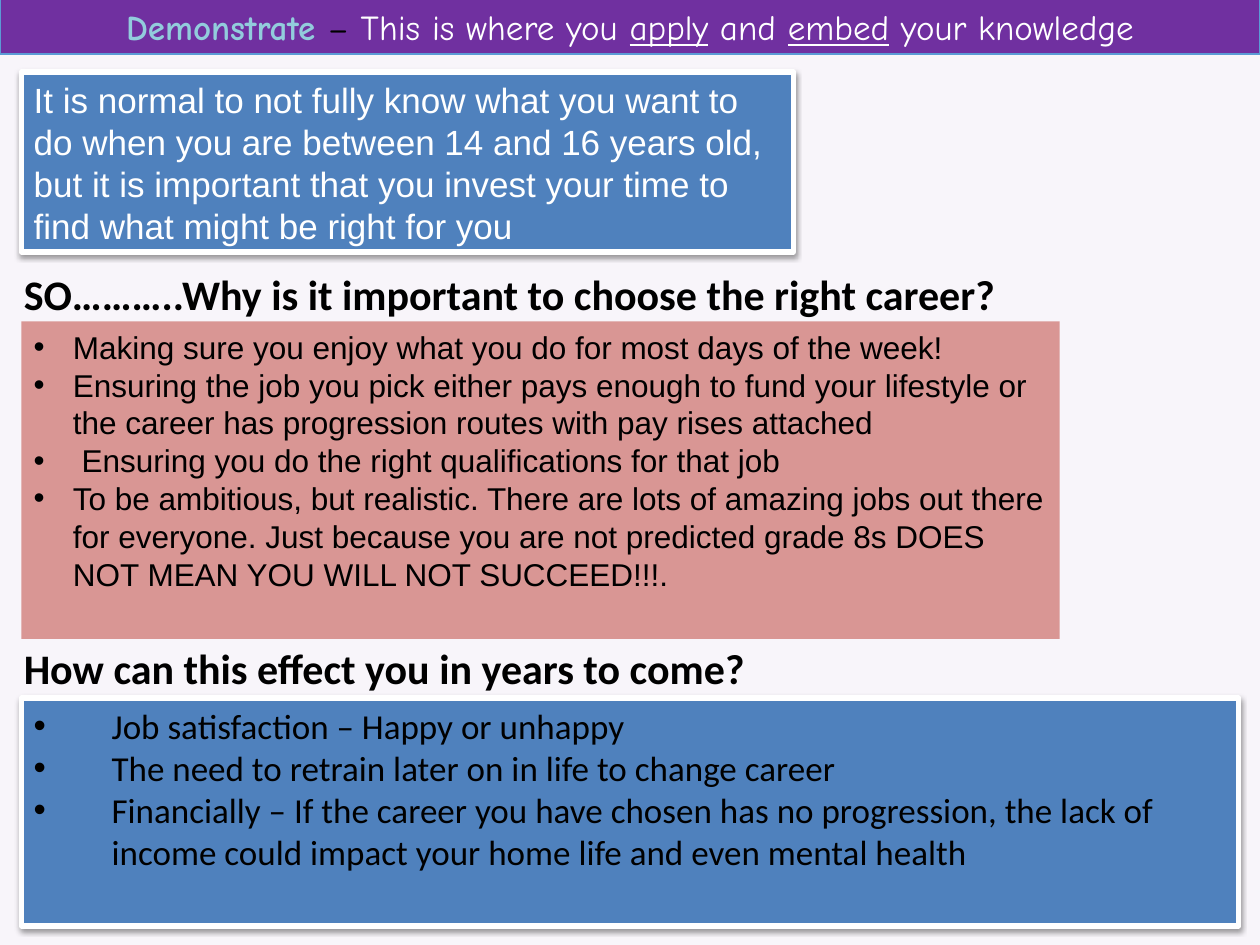
"""Build the careers lesson slide about choosing the right career."""
from dataclasses import dataclass
from typing import Optional

from lxml import etree
from pptx import Presentation
from pptx import util as u
from pptx.dml.color import RGBColor
from pptx.enum import shapes, text
from pptx.oxml import parse_xml
from pptx.oxml.ns import nsdecls, qn

COLOURS = {
    "page": "F8F5FA", "purple": "7030A0", "edge": "5B9BD5", "aqua": "92CCDC",
    "blue": "4F81BD", "pink": "D99694", "white": "FFFFFF", "black": "000000",
}


@dataclass
class Block:
    """A text area with its position in centimetres and its formatting."""
    left: float
    top: float
    width: float
    height: float
    lines: list[str]
    font: str
    size: int
    colour: str = "black"
    fill: Optional[str] = None
    edge: Optional[str] = None
    edge_width: float = 3
    indent: float = 0
    bold: bool = False
    shadow: bool = False
    centred: bool = False


BANNER = Block(0, -0.03, 25.4, 1.12, [], "Comic Neue", 20, fill="purple",
               edge="edge", edge_width=1, centred=True)
BANNER_RUNS = [
    ("Demonstrate ", "aqua", True, False), ("– ", "black", False, False),
    ("This is where you ", "white", False, False), ("apply", "white", False, True),
    (" and ", "white", False, False), ("embed", "white", False, True),
    (" your knowledge", "white", False, False),
]
INTRO = Block(0.43, 1.45, 15.57, 3.63, [
    "It is normal to not fully know what you want to do when you are between 14 and 16 years old, "
    "but it is important that you invest your time to find what might be right for you",
], "Arial", 20, "white", "blue", "white", shadow=True)
HEADINGS = [
    Block(0.23, 5.28, 24.97, 2.39, ["SO………..Why is it important to choose the right career?"],
          "Calibri", 24, bold=True),
    Block(0.23, 12.83, 24.97, 1.57, ["How can this effect you in years to come?"],
          "Calibri", 24, bold=True),
]
LISTS = [
    Block(0.43, 6.48, 20.93, 6.4, [
        "Making sure you enjoy what you do for most days of the week!",
        "Ensuring the job you pick either pays enough to fund your lifestyle or the career has "
        "progression routes with pay rises attached",
        " Ensuring you do the right qualifications for that job",
        "To be ambitious, but realistic. There are lots of amazing jobs out there for everyone. "
        "Just because you are not predicted grade 8s DOES NOT MEAN YOU WILL NOT SUCCEED!!!.",
    ], "Arial", 18, fill="pink", indent=0.79),
    Block(0.43, 14.07, 24.54, 4.6, [
        "Job satisfaction – Happy or unhappy",
        "The need to retrain later on in life to change career",
        "Financially – If the career you have chosen has no progression, the lack of income "
        "could impact your home life and even mental health",
    ], "Calibri", 20, fill="blue", edge="white", indent=1.57, shadow=True),
]


def rgb(name: str) -> RGBColor:
    """Look up a named colour."""
    return RGBColor.from_string(COLOURS[name])


def set_all(target, values: dict) -> None:
    """Set every attribute in the dict on the target."""
    for key, value in values.items():
        setattr(target, key, value)


def box(block: Block) -> tuple:
    """Return left, top, width and height as lengths."""
    return tuple(u.Cm(n) for n in (block.left, block.top, block.width, block.height))


def add_run(paragraph, words: str, block: Block, colour: str, bold: bool, underline: bool) -> None:
    """Append one formatted run."""
    run = paragraph.add_run()
    run.text = words
    set_all(run.font, {"name": block.font, "size": u.Pt(block.size),
                       "bold": bold, "underline": underline})
    run.font.color.rgb = rgb(colour)


def add_bullet(paragraph, indent: float) -> None:
    """Give a paragraph a hanging round bullet."""
    props = paragraph._p.get_or_add_pPr()
    props.set("marL", str(u.Cm(indent)))
    props.set("indent", str(-u.Cm(indent)))
    colour = etree.SubElement(props, qn("a:buClr"))
    etree.SubElement(colour, qn("a:srgbClr"), val=COLOURS["black"])
    etree.SubElement(props, qn("a:buFont"), typeface="Arial")
    etree.SubElement(props, qn("a:buChar"), char="•")


def style(shape, block: Block) -> None:
    """Place a shape and set its fill, line, shadow and text frame."""
    set_all(shape, dict(zip(("left", "top", "width", "height"), box(block))))
    if block.fill:
        shape.fill.solid()
        shape.fill.fore_color.rgb = rgb(block.fill)
    if block.edge:
        shape.line.color.rgb = rgb(block.edge)
        shape.line.width = u.Pt(block.edge_width)
    shape.shadow.inherit = False
    if block.shadow:
        shape._element.spPr.find(qn("a:effectLst")).append(parse_xml(
            f'<a:outerShdw {nsdecls("a")} blurRad="{u.Pt(3.1)}" dist="{u.Pt(1.6)}" dir="5400000" '
            f'rotWithShape="0"><a:srgbClr val="{COLOURS["black"]}"><a:alpha val="38000"/>'
            '</a:srgbClr></a:outerShdw>'))
    anchor = text.MSO_ANCHOR.MIDDLE if block.centred else text.MSO_ANCHOR.TOP
    set_all(shape.text_frame, {
        "word_wrap": True, "auto_size": text.MSO_AUTO_SIZE.NONE, "vertical_anchor": anchor,
        "margin_left": u.Cm(0.25), "margin_right": u.Cm(0.25),
        "margin_top": u.Cm(0.13), "margin_bottom": u.Cm(0.13)})


def write(shape, block: Block) -> None:
    """Style a shape and write its lines as paragraphs."""
    style(shape, block)
    frame = shape.text_frame
    for number, line in enumerate(block.lines):
        paragraph = frame.add_paragraph() if number else frame.paragraphs[0]
        set_all(paragraph, {"alignment": text.PP_ALIGN.LEFT, "space_before": u.Pt(0)})
        if block.indent:
            add_bullet(paragraph, block.indent)
        add_run(paragraph, line, block, block.colour, block.bold, False)


def main() -> None:
    """Assemble and save the slide."""
    deck = Presentation()
    set_all(deck, {"slide_width": u.Cm(25.4), "slide_height": u.Cm(19.05)})
    slide = deck.slides.add_slide(deck.slide_layouts.get_by_name("Two Content"))
    slide.background.fill.solid()
    slide.background.fill.fore_color.rgb = rgb("page")

    banner = slide.shapes.title
    style(banner, BANNER)
    sentence = banner.text_frame.paragraphs[0]
    sentence.alignment = text.PP_ALIGN.CENTER
    for words, colour, bold, underline in BANNER_RUNS:
        add_run(sentence, words, BANNER, colour, bold, underline)

    for index, reasons in enumerate(LISTS, start=1):
        write(slide.placeholders[index], reasons)
    for heading in HEADINGS:
        write(slide.shapes.add_textbox(*box(heading)), heading)
    write(slide.shapes.add_shape(shapes.MSO_SHAPE.RECTANGLE, *box(INTRO)), INTRO)

    for leftover in list(slide.placeholders):
        if not leftover.text_frame.text:
            leftover._element.getparent().remove(leftover._element)
    deck.save("out.pptx")


if __name__ == "__main__":
    main()
